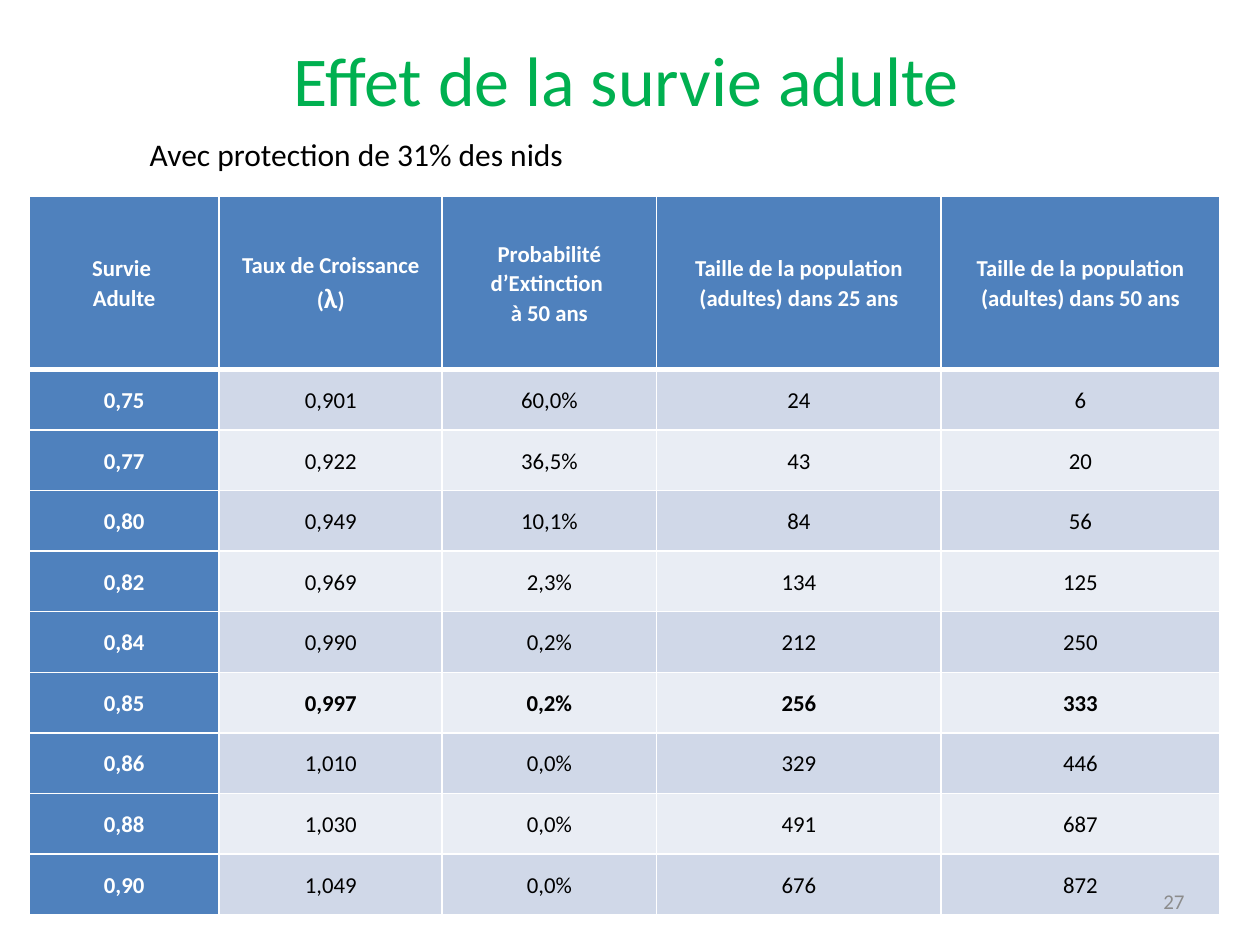
from collections import namedtuple

from lxml import etree
from pptx import Presentation
from pptx import util as u
from pptx.dml.color import RGBColor
from pptx.enum import text
from pptx.oxml.ns import qn

GREEN = RGBColor(0x00, 0xB0, 0x50)
BLUE = RGBColor(0x4F, 0x81, 0xBD)
BANDS = RGBColor(0xD0, 0xD8, 0xE8), RGBColor(0xE9, 0xED, 0xF4)
WHITE = RGBColor(0xFF, 0xFF, 0xFF)
BLACK = RGBColor(0x00, 0x00, 0x00)
GREY = RGBColor(0x8C, 0x8C, 0x8C)

FONT = "Calibri"
WIDTH, HEIGHT = u.Inches(10), u.Inches(7.5)
CENTER, RIGHT = text.PP_ALIGN.CENTER, text.PP_ALIGN.RIGHT
MIDDLE = text.MSO_ANCHOR.MIDDLE

Box = namedtuple("Box", "left top width height")

COLUMN_WEIGHTS = 1.51, 1.77, 1.7, 2.26, 2.21
HEADER_WEIGHT, ROW_WEIGHT = 1.37, 0.48
HEADERS = [
    "Survie \nAdulte",
    "Taux de Croissance\n(λ)",
    "Probabilité d’Extinction \nà 50 ans",
    "Taille de la population (adultes) dans 25 ans",
    "Taille de la population (adultes) dans 50 ans",
]
ROWS = [
    ("0,75", "0,901", "60,0%", "24", "6"),
    ("0,77", "0,922", "36,5%", "43", "20"),
    ("0,80", "0,949", "10,1%", "84", "56"),
    ("0,82", "0,969", "2,3%", "134", "125"),
    ("0,84", "0,990", "0,2%", "212", "250"),
    ("0,85", "0,997", "0,2%", "256", "333"),
    ("0,86", "1,010", "0,0%", "329", "446"),
    ("0,88", "1,030", "0,0%", "491", "687"),
    ("0,90", "1,049", "0,0%", "676", "872"),
]
HIGHLIGHTED = "0,85"


def percent_box(left, top, width, height):
    """Turn percentages of the slide's size into lengths."""
    return Box(int(WIDTH * left / 100), int(HEIGHT * top / 100),
               int(WIDTH * width / 100), int(HEIGHT * height / 100))


def write(frame, content, size, color, bold=False, align=None, spacing=None,
          larger=None, larger_size=None):
    """Fill a frame's first paragraph; the `larger` symbol gets its own size."""
    paragraph = frame.paragraphs[0]
    paragraph.alignment = align
    paragraph.line_spacing = spacing
    for index, line in enumerate(content.split("\n")):
        if index:
            paragraph.add_line_break()
        pieces = line.partition(larger) if larger else (line,)
        for piece in filter(None, pieces):
            run = paragraph.add_run()
            run.text = piece
            run.font.name = FONT
            run.font.size = u.Pt(larger_size if piece == larger else size)
            run.font.bold = bold
            run.font.color.rgb = color


def add_label(slide, box, content, anchor=text.MSO_ANCHOR.TOP, **text_format):
    frame = slide.shapes.add_textbox(*box).text_frame
    frame.word_wrap = True
    frame.vertical_anchor = anchor
    write(frame, content, **text_format)


def set_borders(cell, top=1, bottom=1):
    properties = cell._tc.get_or_add_tcPr()
    for side, points in (("L", 1), ("R", 1), ("T", top), ("B", bottom)):
        line = etree.SubElement(properties, qn(f"a:ln{side}"), w=str(u.Pt(points)))
        fill = etree.SubElement(line, qn("a:solidFill"))
        etree.SubElement(fill, qn("a:srgbClr"), val=str(WHITE))


def format_cell(cell, fill, side_margin, **borders):
    set_borders(cell, **borders)
    cell.fill.solid()
    cell.fill.fore_color.rgb = fill
    cell.vertical_anchor = MIDDLE
    cell.margin_left = cell.margin_right = u.Inches(side_margin)
    cell.margin_top = cell.margin_bottom = 0


def add_survival_table(slide, box):
    row_weights = [HEADER_WEIGHT] + [ROW_WEIGHT] * len(ROWS)
    table = slide.shapes.add_table(
        len(row_weights), len(COLUMN_WEIGHTS), *box).table
    for column, weight in zip(table.columns, COLUMN_WEIGHTS):
        column.width = int(box.width * weight / sum(COLUMN_WEIGHTS))
    for row, weight in zip(table.rows, row_weights):
        row.height = int(box.height * weight / sum(row_weights))

    cell_text = dict(size=13, align=CENTER, spacing=1.07)
    for column, header in enumerate(HEADERS):
        cell = table.cell(0, column)
        format_cell(cell, BLUE, 0.04, bottom=3)
        write(cell.text_frame, header, color=WHITE, bold=True,
              larger="λ", larger_size=16, **cell_text)
    for row, values in enumerate(ROWS):
        for column, value in enumerate(values):
            cell = table.cell(row + 1, column)
            is_label = column == 0
            format_cell(cell, BLUE if is_label else BANDS[row % 2], 0.01,
                        top=1 if row else 3)
            write(cell.text_frame, value, color=WHITE if is_label else BLACK,
                  bold=is_label or values[0] == HIGHLIGHTED, **cell_text)


def main():
    presentation = Presentation()
    presentation.slide_width, presentation.slide_height = WIDTH, HEIGHT
    slide = presentation.slides.add_slide(presentation.slide_layouts[6])
    add_label(slide, percent_box(4.7, 0, 90, 16.67), "Effet de la survie adulte",
              anchor=MIDDLE, size=40, color=GREEN, align=CENTER)
    add_survival_table(slide, percent_box(2.3, 20.8, 94.5, 76))
    add_label(slide, percent_box(10.9, 13.6, 49.4, 5.33),
              "Avec protection de 31% des nids", size=18, color=BLACK)
    add_label(slide, percent_box(71.7, 92.67, 23.3, 5.33), "27",
              anchor=MIDDLE, size=12, color=GREY, align=RIGHT)
    presentation.save("out.pptx")


if __name__ == "__main__":
    main()
